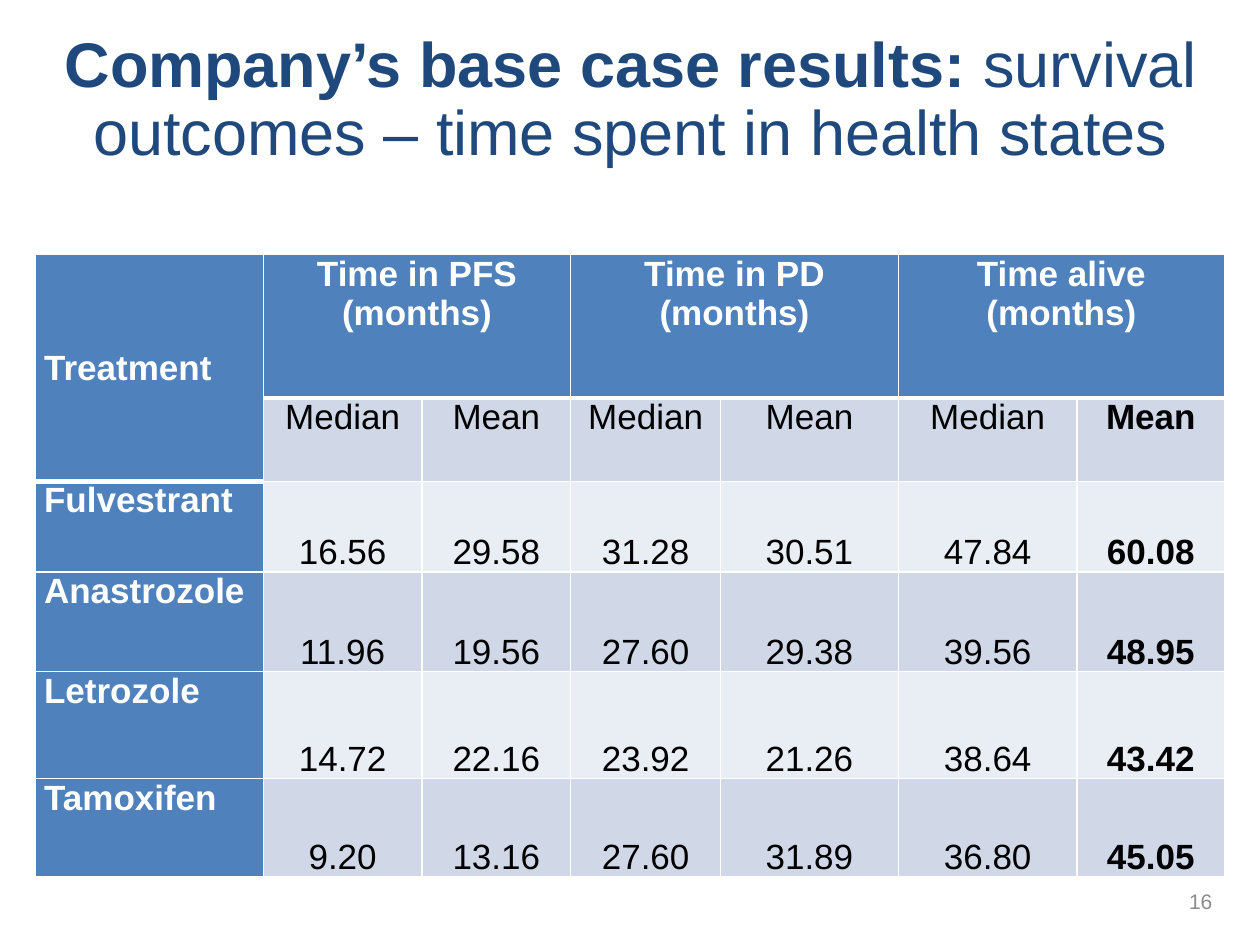
from dataclasses import dataclass

from lxml import etree
from pptx import Presentation
from pptx.dml.color import RGBColor
from pptx.enum.text import MSO_ANCHOR, PP_ALIGN
from pptx.oxml.ns import qn
from pptx.util import Inches, Pt

TOP, MIDDLE, BOTTOM = MSO_ANCHOR.TOP, MSO_ANCHOR.MIDDLE, MSO_ANCHOR.BOTTOM
LEFT, CENTER, RIGHT = PP_ALIGN.LEFT, PP_ALIGN.CENTER, PP_ALIGN.RIGHT

FONT = "Arial"
WHITE, BLACK, NAVY, GREY = "FFFFFF", "000000", "1F497D", "8C8C8C"
HEADER_FILL = "4F81BD"
BAND_FILLS = ("D0D8E8", "E9EDF4")
THIN, THICK = 1, 3

COLUMN_WIDTHS = (1.81, 1.26, 1.18, 1.19, 1.41, 1.42, 1.17)
ROW_HEIGHTS = (1.14, 0.66, 0.72, 0.79, 0.85, 0.78)
ROWS = (
    ("Treatment", "Time in PFS (months)", "", "Time in PD (months)", "", "Time alive (months)", ""),
    ("", "Median", "Mean", "Median", "Mean", "Median", "Mean"),
    ("Fulvestrant", "16.56", "29.58", "31.28", "30.51", "47.84", "60.08"),
    ("Anastrozole", "11.96", "19.56", "27.60", "29.38", "39.56", "48.95"),
    ("Letrozole", "14.72", "22.16", "23.92", "21.26", "38.64", "43.42"),
    ("Tamoxifen", "9.20", "13.16", "27.60", "31.89", "36.80", "45.05"),
)


@dataclass
class TextRun:
    text: str
    size: float
    color: str
    bold: bool = False


def rgb(color: str) -> RGBColor:
    return RGBColor.from_string(color)


def add_run(paragraph, text_run: TextRun) -> None:
    run = paragraph.add_run()
    run.text = text_run.text
    run.font.name = FONT
    run.font.size = Pt(text_run.size)
    run.font.bold = text_run.bold
    run.font.color.rgb = rgb(text_run.color)


def add_text(slide, box: tuple, runs: list[TextRun], alignment, spacing: float = 1.0) -> None:
    shape = slide.shapes.add_textbox(*(Inches(length) for length in box))
    shape.text_frame.word_wrap = True
    shape.text_frame.vertical_anchor = MIDDLE
    paragraph = shape.text_frame.paragraphs[0]
    paragraph.alignment = alignment
    paragraph.line_spacing = spacing
    for text_run in runs:
        add_run(paragraph, text_run)


def set_borders(cell, top: float, bottom: float) -> None:
    properties = cell._tc.get_or_add_tcPr()
    for tag, width in (("a:lnL", THIN), ("a:lnR", THIN), ("a:lnT", top), ("a:lnB", bottom)):
        line = etree.SubElement(properties, qn(tag), w=str(Pt(width)))
        fill = etree.SubElement(line, qn("a:solidFill"))
        etree.SubElement(fill, qn("a:srgbClr"), val=WHITE)


def style_cell(cell, row: int, column: int, text: str) -> None:
    is_header = row == 0 or column == 0
    last_header_row = 1 if column == 0 else 0
    set_borders(
        cell,
        THICK if row == last_header_row + 1 else THIN,
        THICK if row <= last_header_row else THIN,
    )
    cell.fill.solid()
    cell.fill.fore_color.rgb = rgb(HEADER_FILL if is_header else BAND_FILLS[(row - 1) % 2])
    cell.margin_left = cell.margin_right = Inches(0.07)
    cell.margin_top = cell.margin_bottom = 0
    if row == 0 and column == 0:
        cell.vertical_anchor = MIDDLE
    else:
        cell.vertical_anchor = BOTTOM if row > 1 and column > 0 else TOP
    if text:
        paragraph = cell.text_frame.paragraphs[0]
        paragraph.alignment = LEFT if column == 0 else CENTER
        bold = is_header or column == len(COLUMN_WIDTHS) - 1
        add_run(paragraph, TextRun(text, 20, WHITE if is_header else BLACK, bold))


def add_results_table(slide) -> None:
    frame = slide.shapes.add_table(
        len(ROWS), len(COLUMN_WIDTHS), Inches(0.28), Inches(2.02),
        Inches(sum(COLUMN_WIDTHS)), Inches(sum(ROW_HEIGHTS)),
    )
    table = frame.table
    for column, width in zip(table.columns, COLUMN_WIDTHS):
        column.width = Inches(width)
    for row, height in zip(table.rows, ROW_HEIGHTS):
        row.height = Inches(height)
    table.cell(0, 0).merge(table.cell(1, 0))
    for column in (1, 3, 5):
        table.cell(0, column).merge(table.cell(0, column + 1))
    for row, texts in enumerate(ROWS):
        for column, text in enumerate(texts):
            style_cell(table.cell(row, column), row, column, text)


def main() -> None:
    presentation = Presentation()
    presentation.slide_width = Inches(10)
    presentation.slide_height = Inches(7.5)
    slide = presentation.slides.add_slide(presentation.slide_layouts[6])
    title = [
        TextRun("Company’s base case results: ", 36, NAVY, True),
        TextRun("survival outcomes – time spent in health states", 36, NAVY),
    ]
    add_text(slide, (0.28, 0.29, 9.45, 1.03), title, CENTER, 0.9)
    add_results_table(slide)
    add_text(slide, (7.47, 6.95, 2.25, 0.4), [TextRun("16", 12, GREY)], RIGHT)
    presentation.save("out.pptx")


if __name__ == "__main__":
    main()
